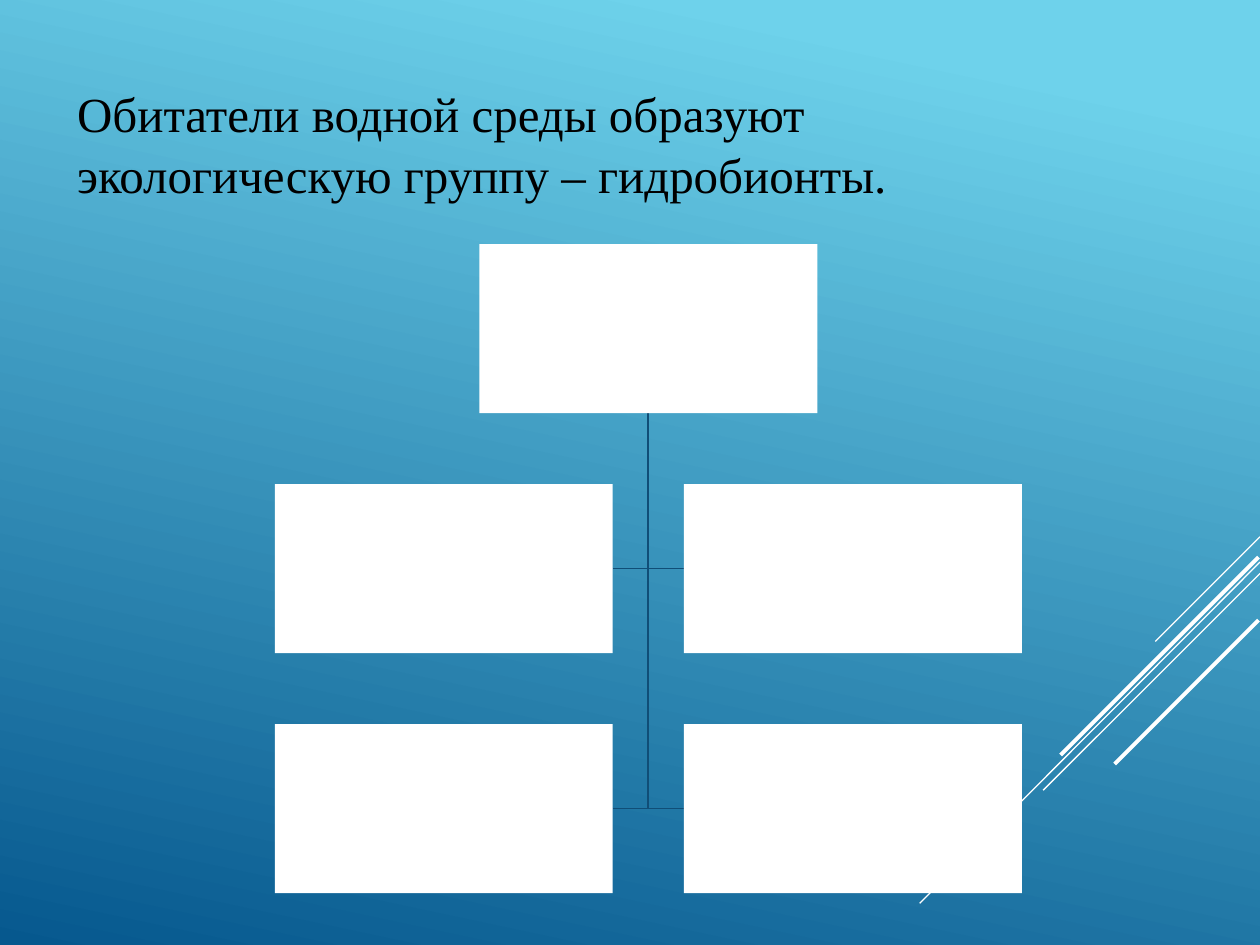
from pptx import Presentation
from pptx import util as u
from pptx.dml.color import RGBColor
from pptx.enum import shapes, text
from pptx.oxml.ns import qn
from lxml import etree

Cm = u.Cm


def rgb(code):
    return RGBColor.from_string(code)


def back(slide):
    """Blue gradient background."""
    fill = slide.background.fill
    fill.gradient()
    fill.gradient_angle = 258
    for stop, (pos, code) in zip(fill.gradient_stops,
                                 [(0.1, "6ED2EB"), (1, "06588E")]):
        stop.position = pos
        stop.color.rgb = rgb(code)


def rays(slide, x, y):
    """Slanted white lines; x, y is where the top one meets the edge."""
    # start dx, start dy, run, drop, width
    for dx, dy, run, drop, size in [(0, 0, 2.11, 2.11, 0.75),
                                    (0, 0.51, 6.86, 6.88, 0.75),
                                    (0, 0.74, 4.37, 4.37, 0.75),
                                    (-0.03, 0.41, 3.99, 3.99, 2.25),
                                    (-0.03, 1.68, 2.9, 2.9, 2.25)]:
        ray = slide.shapes.add_connector(
            shapes.MSO_CONNECTOR.STRAIGHT, Cm(x + dx), Cm(y + dy),
            Cm(x + dx - run), Cm(y + dy + drop))
        ray.line.color.rgb = rgb("FFFFFF")
        ray.line.width = u.Pt(size)
        etree.SubElement(ray._element.spPr, qn("a:effectLst"))


def lead(slide, x, y, w, h):
    """Statement in the body placeholder."""
    title, body = slide.placeholders
    title._element.getparent().remove(title._element)
    body.left, body.top, body.width, body.height = map(Cm, (x, y, w, h))
    frame = body.text_frame
    look = {"word_wrap": True, "auto_size": text.MSO_AUTO_SIZE.NONE,
            "vertical_anchor": text.MSO_ANCHOR.MIDDLE,
            "margin_bottom": Cm(1.26)}
    for key, val in look.items():
        setattr(frame, key, val)
    para = frame.paragraphs[0]
    para.text = ("Обитатели водной среды образуют "
                 "экологическую группу – гидробионты.")
    props = para._p.get_or_add_pPr()
    props.set("marL", "0")
    props.set("indent", "0")
    etree.SubElement(props, qn("a:buNone"))
    para.space_before = u.Pt(0)
    para.line_spacing = 1.05
    font = para.runs[0].font
    for key, val in {"name": "Times New Roman", "size": u.Pt(28)}.items():
        setattr(font, key, val)
    font.color.rgb = rgb("000000")


def card(slide, x, y, w, h):
    """Plain white box."""
    box = slide.shapes.add_shape(shapes.MSO_SHAPE.RECTANGLE,
                                 Cm(x), Cm(y), Cm(w), Cm(h))
    box.shadow.inherit = False
    box.fill.solid()
    box.fill.fore_color.rgb = rgb("FFFFFF")
    box.line.fill.background()


def elbow(slide, x, y, dx, dy):
    """Branch going down, then sideways."""
    pen = slide.shapes.build_freeform(Cm(x), Cm(y))
    pen.add_line_segments([(Cm(x), Cm(y + dy)), (Cm(x + dx), Cm(y + dy))],
                          close=False)
    path = pen.convert_to_shape()
    path.shadow.inherit = False
    path.fill.background()
    path.line.color.rgb = rgb("104E77")
    path.line.width = u.Pt(1)


def tree(slide, x, y, w):
    """Root box over a two by two grid, all within width w."""
    wide = w / 2.21
    high, gap = wide / 2, wide * 0.21
    step = high + gap
    mid = x + w / 2
    # Branches lie behind the boxes
    for row in (2, 1):
        for side in (1, -1):
            elbow(slide, mid, y + high, side * gap / 2,
                  row * step - high / 2)
    card(slide, mid - wide / 2, y, wide, high)
    for row in (1, 2):
        for col in (0, 1):
            card(slide, x + col * (wide + gap), y + row * step, wide, high)


def main():
    deck = Presentation()
    deck.slide_width, deck.slide_height = Cm(25.4), Cm(19.05)
    slide = deck.slides.add_slide(deck.slide_layouts[1])
    back(slide)
    rays(slide, 25.4, 10.82)
    lead(slide, 1.3, 0.33, 21.16, 6.2)
    tree(slide, 5.54, 4.92, 15.06)
    deck.save("out.pptx")


if __name__ == "__main__":
    main()
